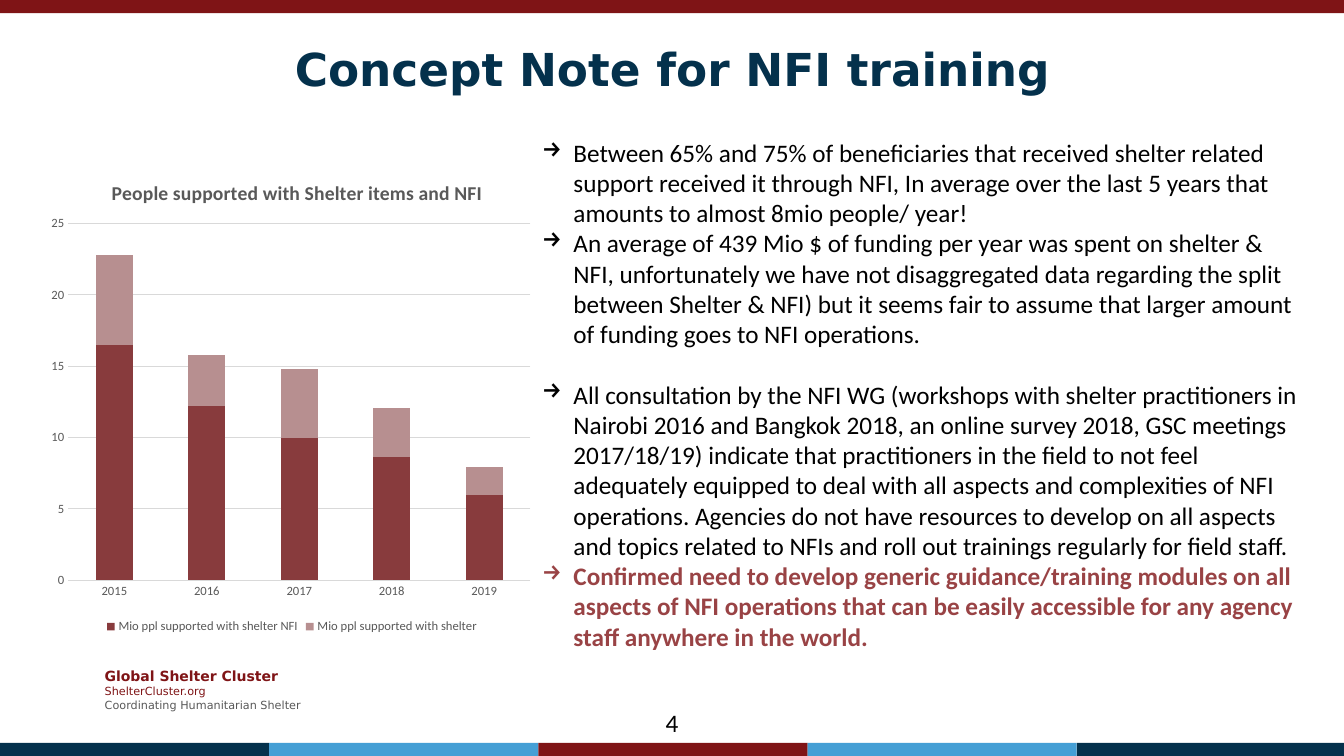
"""Build the NFI training concept note slide with its stacked chart."""
from lxml import etree
from pptx import Presentation
from pptx.chart.data import CategoryChartData
from pptx.dml.color import RGBColor
from pptx.enum.chart import XL_CHART_TYPE, XL_LEGEND_POSITION, XL_TICK_MARK
from pptx.enum.shapes import MSO_SHAPE
from pptx.enum.text import MSO_ANCHOR, PP_ALIGN
from pptx.oxml.ns import qn
from pptx.util import Inches, Pt

MAROON = RGBColor(0x7F, 0x14, 0x16)
NAVY = RGBColor(0x04, 0x31, 0x4C)
SKY = RGBColor(0x45, 0x9F, 0xD5)
BLACK = RGBColor(0, 0, 0)
GREY = RGBColor(0x59, 0x59, 0x59)
GRID = RGBColor(0xD9, 0xD9, 0xD9)
BRICK = RGBColor(0x99, 0x43, 0x45)
NFI_RED = RGBColor(0x88, 0x3B, 0x3D)
SHELTER_PINK = RGBColor(0xB7, 0x8F, 0x90)


def add_text(box, lines, align=PP_ALIGN.LEFT, anchor=MSO_ANCHOR.TOP):
    """Add a text box of (text, size, font, colour, bold) lines."""
    tf = s.shapes.add_textbox(*[Inches(v) for v in box]).text_frame
    tf.word_wrap = True
    tf.vertical_anchor = anchor
    for i, (text, size, name, color, bold) in enumerate(lines):
        p = tf.paragraphs[0] if i == 0 else tf.add_paragraph()
        p.alignment = align
        r = p.add_run()
        r.text = text
        r.font.size, r.font.name, r.font.bold = Pt(size), name, bold
        r.font.color.rgb = color
    return tf


def place(parent, index, **fractions):
    """Give a chart part a fixed place, in fractions of the chart."""
    for old in parent.findall(qn("c:layout")):
        parent.remove(old)
    layout = etree.Element(qn("c:layout"))
    parent.insert(index, layout)
    manual = etree.SubElement(layout, qn("c:manualLayout"))
    if "w" in fractions:
        etree.SubElement(manual, qn("c:layoutTarget")).set("val", "inner")
    for key in ("xMode", "yMode"):
        etree.SubElement(manual, qn("c:" + key)).set("val", "edge")
    for key, value in fractions.items():
        etree.SubElement(manual, qn("c:" + key)).set("val", str(value))


prs = Presentation()
prs.slide_width, prs.slide_height = Inches(13.33), Inches(7.5)
s = prs.slides.add_slide(prs.slide_layouts[6])

bands = [(0, 0, 13.33, MAROON)]
for i, color in enumerate((NAVY, SKY, MAROON, SKY, NAVY)):
    bands.append((i * 2.67, 7.37, 2.67, color))
for left, top, width, color in bands:
    sp = s.shapes.add_shape(MSO_SHAPE.RECTANGLE, Inches(left), Inches(top),
                            Inches(width), Inches(0.13))
    sp.shadow.inherit = False
    sp.fill.solid()
    sp.fill.fore_color.rgb = color
    sp.line.fill.background()

add_text((0.94, 6.57, 2.6, 0.54), [
    ("Global Shelter Cluster", 10, "DejaVu Sans", MAROON, True),
    ("ShelterCluster.org", 8, "DejaVu Sans", MAROON, False),
    ("Coordinating Humanitarian Shelter", 8, "DejaVu Sans", GREY, False),
], anchor=MSO_ANCHOR.MIDDLE)
add_text((0.67, 0.3, 12, 0.75),
         [("Concept Note for NFI training", 32.4, "DejaVu Sans", NAVY, True)],
         PP_ALIGN.CENTER, MSO_ANCHOR.MIDDLE)
add_text((0, 6.97, 13.33, 0.4), [("4", 18, "Calibri", BLACK, False)],
         PP_ALIGN.CENTER)

data = CategoryChartData()
data.categories = ["2015", "2016", "2017", "2018", "2019"]
data.add_series("Mio ppl supported with shelter NFI", (16.5, 12.2, 10, 8.6, 6))
data.add_series("Mio ppl supported with shelter", (6.3, 3.6, 4.8, 3.5, 1.9))
chart = s.shapes.add_chart(XL_CHART_TYPE.COLUMN_STACKED, Inches(0.43), Inches(1.55),
                           Inches(4.93), Inches(4.78), data).chart
chart.font.name, chart.font.size = "Calibri", Pt(10)
chart.font.color.rgb = BLACK

chart.has_title = True
r = chart.chart_title.text_frame.paragraphs[0].add_run()
r.text = "People supported with Shelter items and NFI"
r.font.size, r.font.name, r.font.bold = Pt(14), "Calibri", True
r.font.color.rgb = GREY
place(chart.chart_title._element, 1, x=0.13, y=0.04)

chart.has_legend = True
chart.legend.position = XL_LEGEND_POSITION.BOTTOM
chart.legend.include_in_layout = False

plot = chart.plots[0]
plot.gap_width, plot.overlap = 150, 100
plot.vary_by_categories = False
for series, color in zip(plot.series, (NFI_RED, SHELTER_PINK)):
    series.format.fill.solid()
    series.format.fill.fore_color.rgb = color
place(chart._chartSpace.chart.plotArea, 0, x=0.05, y=0.14, w=0.93, h=0.74)

years, millions = chart.category_axis, chart.value_axis
for font in (years.tick_labels.font, millions.tick_labels.font, chart.legend.font):
    font.size, font.name = Pt(9), "Calibri"
    font.color.rgb = GREY
for axis in (years, millions):
    axis.major_tick_mark = axis.minor_tick_mark = XL_TICK_MARK.NONE
millions.minimum_scale, millions.maximum_scale, millions.major_unit = 0, 25, 5
millions.has_major_gridlines = True
millions.format.line.fill.background()
for line in (years.format.line, millions.major_gridlines.format.line):
    line.color.rgb = GRID
    line.width = Pt(0.75)

points = [
    "Between 65% and 75% of beneficiaries that received shelter related support "
    "received it through NFI, In average over the last 5 years that amounts to "
    "almost 8mio people/ year!",
    "An average of 439 Mio $ of funding per year was spent on shelter & NFI, "
    "unfortunately we have not disaggregated data regarding the split between "
    "Shelter & NFI) but it seems fair to assume that larger amount of funding "
    "goes to NFI operations.",
    "All consultation by the NFI WG (workshops with shelter practitioners in "
    "Nairobi 2016 and Bangkok 2018, an online survey 2018, GSC meetings "
    "2017/18/19) indicate that practitioners in the field to not feel adequately "
    "equipped to deal with all aspects and complexities of NFI operations. "
    "Agencies do not have resources to develop on all aspects and topics related "
    "to NFIs and roll out trainings regularly for field staff.",
]
conclusion = ("Confirmed need to develop generic guidance/training modules on all "
              "aspects of NFI operations that can be easily accessible for any "
              "agency staff anywhere in the world.")
lines = [(text, 18, "Calibri", BLACK, False) for text in points]
lines.append((conclusion, 18, "Calibri", BRICK, True))
tf = add_text((5.28, 1.31, 7.7, 5.55), lines)
for p in tf.paragraphs:
    pPr = p._p.get_or_add_pPr()
    pPr.set("marL", str(Inches(0.31)))
    pPr.set("indent", str(-Inches(0.31)))
    etree.SubElement(pPr, qn("a:buChar")).set("char", "→")
tf.paragraphs[2].space_before = Pt(21.6)

prs.save("out.pptx")
